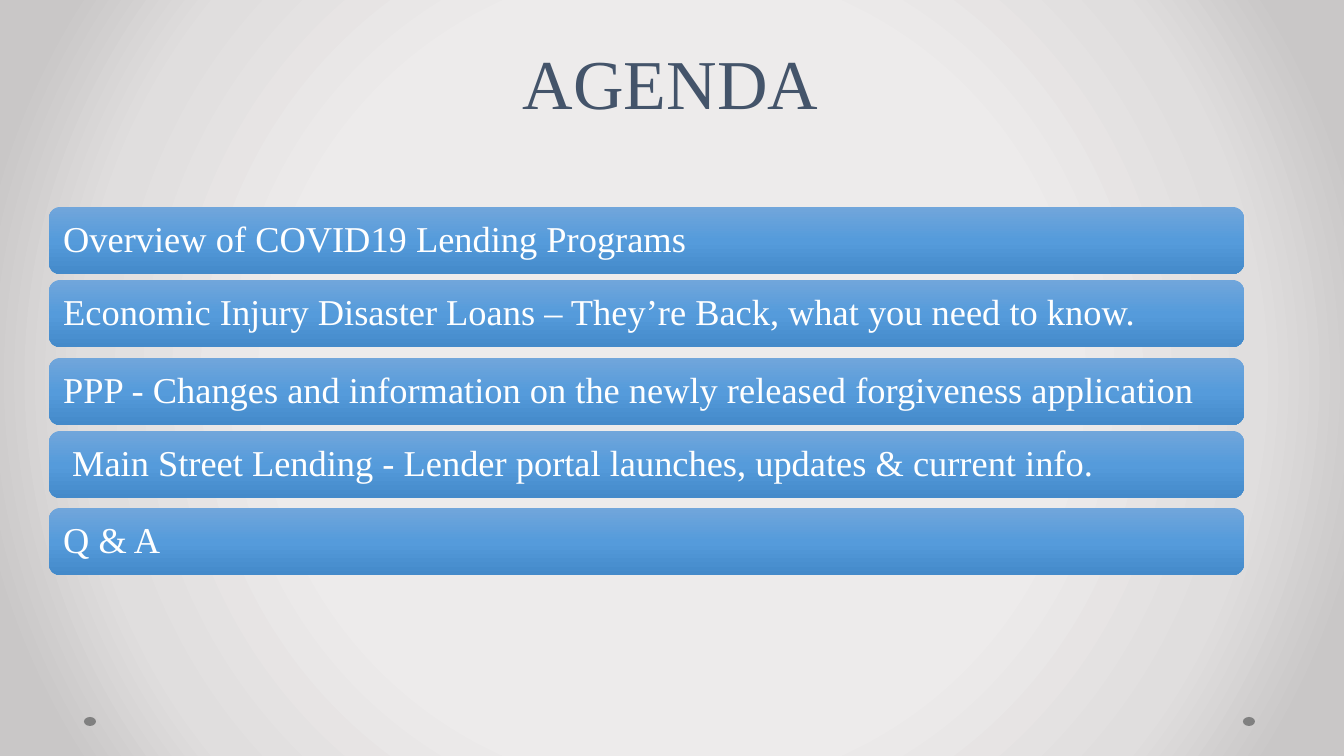
from dataclasses import dataclass

from pptx import Presentation
from pptx import util as u
from pptx.dml.color import RGBColor
from pptx.enum import shapes, text
from pptx.oxml import parse_xml
from pptx.oxml.ns import nsdecls, qn
from pptx.oxml.xmlchemy import BaseOxmlElement
from pptx.slide import Slide
from pptx.text.text import TextFrame

EMU_PER_PX = 914400 / 100.8
Stops = tuple[tuple[int, str], ...]


@dataclass(frozen=True)
class Theme:
    font: str = "Times New Roman"
    title_size: int = 50
    title_leading: int = 48
    item_size: int = 26
    item_leading: float = 0.9
    title_color: str = "44546A"
    item_color: str = "FFFFFF"
    dot_color: str = "808080"
    backdrop: Stops = ((50, "EDEBEB"), (76, "E0DEDE"), (92, "C9C7C7"))
    bar: Stops = ((0, "71A6DB"), (50, "559BDB"), (100, "448ACA"))


@dataclass(frozen=True)
class AgendaItem:
    top: int
    wording: str
    indent: int = 0


THEME = Theme()
BAR_LEFT, BAR_WIDTH, BAR_HEIGHT, BAR_INSET = 49, 1195, 67, 14
DOT_LEFTS, DOT_TOP, DOT_WIDTH, DOT_HEIGHT = (84, 1243), 717, 12, 9
AGENDA = (
    AgendaItem(207, "Overview of COVID19 Lending Programs"),
    AgendaItem(280, "Economic Injury Disaster Loans – They’re Back, what you need to know."),
    AgendaItem(358, "PPP - Changes and information on the newly released forgiveness application"),
    AgendaItem(431, "Main Street Lending - Lender portal launches, updates & current info.", indent=9),
    AgendaItem(508, "Q & A"),
)
RADIAL = '<a:path path="circle"><a:fillToRect l="50000" t="50000" r="50000" b="50000"/></a:path>'
DOWNWARD = '<a:lin ang="5400000" scaled="0"/>'


def px(length: int) -> u.Emu:
    return u.Emu(round(length * EMU_PER_PX))


def set_gradient(properties: BaseOxmlElement, stops: Stops, direction: str) -> None:
    """Put a gradient in the place of the empty fill of the given properties."""
    stop_list = "".join(
        f'<a:gs pos="{position * 1000}"><a:srgbClr val="{color}"/></a:gs>'
        for position, color in stops
    )
    gradient = parse_xml(
        f'<a:gradFill {nsdecls("a")} rotWithShape="1">'
        f"<a:gsLst>{stop_list}</a:gsLst>{direction}</a:gradFill>"
    )
    properties.replace(properties.find(qn("a:noFill")), gradient)


def write(
    frame: TextFrame,
    wording: str,
    *,
    size: int,
    color: str,
    align: text.PP_ALIGN,
    anchor: text.MSO_ANCHOR,
    leading: float | u.Length,
) -> None:
    frame.word_wrap = True
    frame.auto_size = text.MSO_AUTO_SIZE.NONE
    frame.vertical_anchor = anchor
    paragraph = frame.paragraphs[0]
    paragraph.alignment = align
    paragraph.line_spacing = leading
    run = paragraph.add_run()
    run.text = wording
    run.font.name = THEME.font
    run.font.size = u.Pt(size)
    run.font.color.rgb = RGBColor.from_string(color)


def add_background(slide: Slide) -> None:
    slide.background.fill.background()
    set_gradient(slide.element.find(".//" + qn("p:bgPr")), THEME.backdrop, RADIAL)


def add_dot(slide: Slide, left: int) -> None:
    dot = slide.shapes.add_shape(
        shapes.MSO_SHAPE.OVAL, px(left), px(DOT_TOP), px(DOT_WIDTH), px(DOT_HEIGHT)
    )
    dot.fill.solid()
    dot.fill.fore_color.rgb = RGBColor.from_string(THEME.dot_color)
    dot.line.fill.background()
    dot.shadow.inherit = False


def add_title(slide: Slide, wording: str) -> None:
    title = slide.shapes.title
    title.left, title.top, title.width, title.height = map(px, (56, 27, 1229, 102))
    write(
        title.text_frame,
        wording,
        size=THEME.title_size,
        color=THEME.title_color,
        align=text.PP_ALIGN.CENTER,
        anchor=text.MSO_ANCHOR.BOTTOM,
        leading=u.Pt(THEME.title_leading),
    )


def add_agenda_bar(slide: Slide, item: AgendaItem) -> None:
    bar = slide.shapes.add_shape(
        shapes.MSO_SHAPE.ROUNDED_RECTANGLE,
        px(BAR_LEFT), px(item.top), px(BAR_WIDTH), px(BAR_HEIGHT),
    )
    bar.fill.background()
    set_gradient(bar.element.spPr, THEME.bar, DOWNWARD)
    bar.line.fill.background()
    bar.shadow.inherit = False
    frame = bar.text_frame
    # A rounded rectangle already insets its text by about 3 px.
    frame.margin_left = px(BAR_INSET - 3 + item.indent)
    frame.margin_right = px(BAR_INSET - 3)
    write(
        frame,
        item.wording,
        size=THEME.item_size,
        color=THEME.item_color,
        align=text.PP_ALIGN.LEFT,
        anchor=text.MSO_ANCHOR.MIDDLE,
        leading=THEME.item_leading,
    )


def main() -> None:
    deck = Presentation()
    deck.slide_width, deck.slide_height = px(1344), px(756)
    slide = deck.slides.add_slide(deck.slide_layouts.get_by_name("Title Only"))
    add_background(slide)
    for left in DOT_LEFTS:
        add_dot(slide, left)
    add_title(slide, "AGENDA")
    for item in AGENDA:
        add_agenda_bar(slide, item)
    deck.save("out.pptx")


if __name__ == "__main__":
    main()
